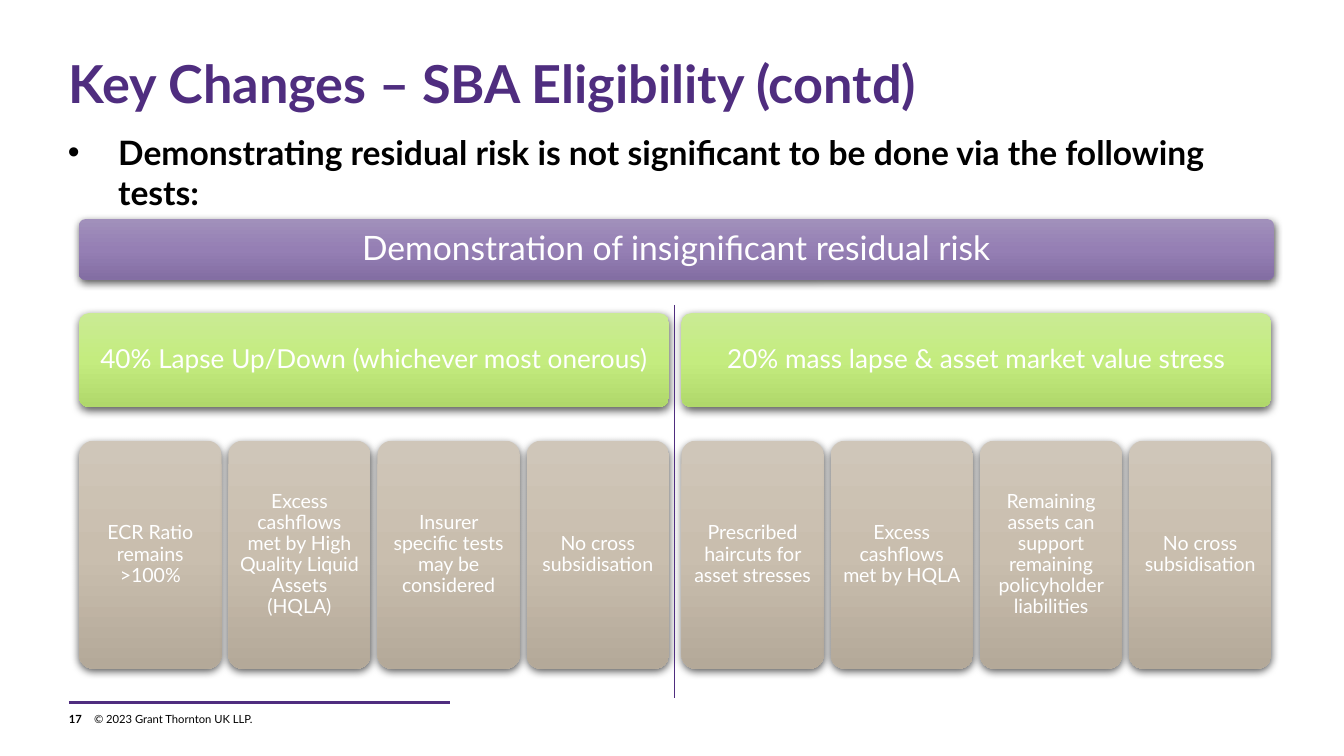
from pptx import Presentation
from pptx.dml.color import RGBColor
from pptx.enum.shapes import MSO_CONNECTOR as Link, MSO_SHAPE as Form
from pptx.enum.text import MSO_ANCHOR as Anchor, MSO_AUTO_SIZE as Fit, PP_ALIGN as Align
from pptx.oxml import parse_xml
from pptx.oxml.ns import nsdecls, qn
from pptx.util import Pt
from copy import deepcopy
from lxml import etree

PURPLE = RGBColor(0x4F, 0x2D, 0x7F)
BLACK = RGBColor(0, 0, 0)
WHITE = RGBColor(0xFF, 0xFF, 0xFF)
VIOLET = [RGBColor(0xA1, 0x90, 0xBB), RGBColor(0x95, 0x7F, 0xB4), RGBColor(0x83, 0x6E, 0xA3)]
GREEN = [RGBColor(0xCA, 0xEB, 0x94), RGBColor(0xC4, 0xEC, 0x7F), RGBColor(0xB0, 0xD8, 0x6B)]
SAND = [RGBColor(0xCF, 0xC6, 0xB9), RGBColor(0xC9, 0xBE, 0xAE), RGBColor(0xB4, 0xA9, 0x99)]

LEFT = 42.4
CARD = 76.3
STEP = 79.92
HALF = 3 * STEP + CARD
SIDES = [LEFT, 365.1]

TESTS = [
    ("40% Lapse Up/Down (whichever most onerous)", [
        "ECR Ratio remains >100%",
        "Excess cashflows met by High Quality Liquid Assets (HQLA)",
        "Insurer specific tests may be considered",
        "No cross subsidisation"]),
    ("20% mass lapse & asset market value stress", [
        "Prescribed haircuts for asset stresses",
        "Excess cashflows met by HQLA",
        "Remaining assets can support remaining policyholder liabilities",
        "No cross subsidisation"]),
]


def write(shape, text, size, color=BLACK, bold=False, align=Align.LEFT,
          anchor=Anchor.TOP, inset=0, lead=1, after=0, bullet=None):
    """Fill a shape with one paragraph; bullet is (character, indent)."""
    frame = shape.text_frame
    frame.text = text
    frame.word_wrap = True
    frame.auto_size = Fit.NONE
    frame.vertical_anchor = anchor
    frame.margin_left = frame.margin_right = Pt(inset)
    frame.margin_top = frame.margin_bottom = Pt(inset)
    para = frame.paragraphs[0]
    if bullet:
        mark, indent = bullet
        props = para._p.get_or_add_pPr()
        props.set("marL", str(Pt(indent)))
        props.set("indent", str(-Pt(indent)))
        etree.SubElement(props, qn("a:buFont")).set("typeface", "Arial")
        etree.SubElement(props, qn("a:buChar")).set("char", mark)
    para.alignment = align
    para.line_spacing = lead
    para.space_before = Pt(0)
    para.space_after = Pt(after)
    font = para.runs[0].font
    font.name = "Lato"
    font.size = Pt(size)
    font.bold = bold
    font.color.rgb = color


class Page:
    def __init__(self, deck):
        self.slide = deck.slides.add_slide(deck.slide_layouts[1])
        self.shapes = self.slide.shapes

    def hold(self, index, box, text, size, **style):
        """Move and fill a template placeholder."""
        shape = self.slide.placeholders[index]
        shape.left, shape.top, shape.width, shape.height = map(Pt, box)
        write(shape, text, size, **style)

    def label(self, box, text, size, **style):
        write(self.shapes.add_textbox(*map(Pt, box)), text, size, **style)

    def line(self, start, end, width):
        link = self.shapes.add_connector(Link.STRAIGHT, *map(Pt, start + end))
        link.line.color.rgb = PURPLE
        link.line.width = Pt(width)
        etree.SubElement(link._element.spPr, qn("a:effectLst"))

    def block(self, box, text, size, tones, inset):
        """Add a rounded box with a vertical gradient and a soft shadow."""
        shape = self.shapes.add_shape(Form.ROUNDED_RECTANGLE, *map(Pt, box))
        shape.adjustments[0] = 0.1
        shape.line.fill.background()
        self.shade(shape, tones)
        self.drop(shape)
        write(shape, text, size, color=WHITE, align=Align.CENTER,
              anchor=Anchor.MIDDLE, inset=inset, lead=0.9)

    def shade(self, shape, tones):
        fill = shape.fill
        fill.gradient()
        fill.gradient_angle = 270
        stops = shape._element.spPr.find(qn("a:gradFill")).find(qn("a:gsLst"))
        stops.append(deepcopy(stops[0]))
        for place, (stop, tone) in enumerate(zip(fill.gradient_stops, tones)):
            stop.color.rgb = tone
            stop.position = place / 2

    def drop(self, shape):
        shape.shadow.inherit = False
        shape._element.spPr.find(qn("a:effectLst")).append(parse_xml(
            f'<a:outerShdw {nsdecls("a")} blurRad="{Pt(4.5)}" dist="{Pt(1.5)}" '
            'dir="5400000" algn="ctr" rotWithShape="0"><a:srgbClr val="000000">'
            '<a:alpha val="63000"/></a:srgbClr></a:outerShdw>'))


def main():
    deck = Presentation()
    deck.slide_width, deck.slide_height = Pt(720), Pt(405)
    page = Page(deck)

    page.hold(0, (36.9, 31, 646.6, 62.6), "Key Changes – SBA Eligibility (contd)",
              28, color=PURPLE, bold=True, lead=0.9)
    page.hold(1, (36.3, 70.6, 646.6, 263.5),
              "Demonstrating residual risk is not significant to be done via the following tests:",
              18, bold=True, after=6, bullet=("•", 27))

    page.block((LEFT, 117.4, 640, 32.4), "Demonstration of insignificant residual risk",
               18, VIOLET, 5)
    for left, (test, checks) in zip(SIDES, TESTS):
        page.block((left, 167.8, HALF, 50.2), test, 14, GREEN, 4.2)
        for col, check in enumerate(checks):
            page.block((left + col * STEP, 236.1, CARD, 122.2), check, 10.5, SAND, 3.2)
    page.line((361.4, 163.4), (361.4, 373.7), 0.5)

    page.line((36.9, 376.4), (241.2, 376.4), 1.5)
    page.label((36.9, 381.6, 13, 7.2), "17", 6, bold=True)
    page.label((50.4, 381.6, 310, 7.2), "© 2023 Grant Thornton UK LLP.", 6)
    deck.save("out.pptx")


if __name__ == "__main__":
    main()
